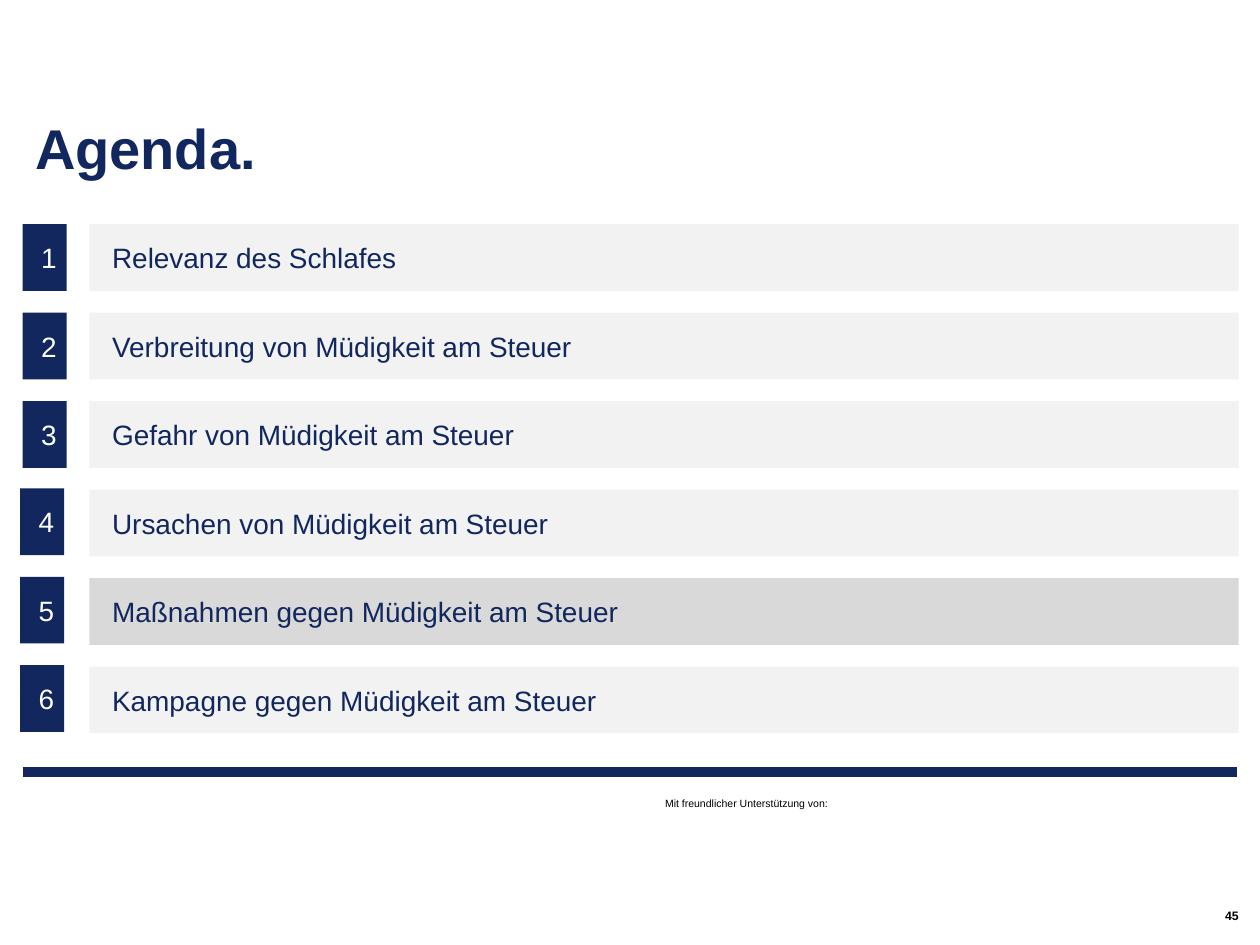
from dataclasses import dataclass

from lxml.etree import SubElement
from pptx import Presentation
from pptx.dml.color import RGBColor
from pptx.enum.shapes import MSO_CONNECTOR as Connector, MSO_SHAPE as Shape
from pptx.enum.text import MSO_ANCHOR as Anchor, PP_ALIGN as Align
from pptx.oxml.ns import qn
from pptx.util import Inches, Pt

NAVY = RGBColor(0x11, 0x27, 0x5D)
WHITE = RGBColor(0xFF, 0xFF, 0xFF)
BLACK = RGBColor(0, 0, 0)
LIGHT_GREY = RGBColor(0xF2, 0xF2, 0xF2)
MID_GREY = RGBColor(0xD9, 0xD9, 0xD9)

# Agenda grid in inches: a number column and a topic column
FIRST_ROW, ROW_PITCH, ROW_HEIGHT = 1.78, 0.702, 0.53
NUMBER_LEFT, NUMBER_WIDTH = 0.18, 0.35
TOPIC_LEFT, TOPIC_WIDTH = 0.71, 9.12


@dataclass(frozen=True)
class Topic:
    title: str
    fill: RGBColor = LIGHT_GREY
    nudge_left: float = 0
    nudge_up: float = 0


@dataclass(frozen=True)
class Style:
    size: float
    color: RGBColor
    bold: bool = False
    align: Align = Align.LEFT
    anchor: Anchor = Anchor.MIDDLE
    side_inset: float = 0.1
    end_inset: float = 0.05
    space_after: float = 0
    line_spacing: float = 1.0


TOPICS = (
    Topic("Relevanz des Schlafes"),
    Topic("Verbreitung von Müdigkeit am Steuer"),
    Topic("Gefahr von Müdigkeit am Steuer"),
    Topic("Ursachen von Müdigkeit am Steuer", nudge_left=0.02, nudge_up=0.01),
    Topic("Maßnahmen gegen Müdigkeit am Steuer", MID_GREY, 0.02, 0.01),
    Topic("Kampagne gegen Müdigkeit am Steuer", nudge_left=0.02, nudge_up=0.01),
)

TITLE = Style(32, NAVY, bold=True, anchor=Anchor.BOTTOM, end_inset=0, line_spacing=0.9)
NUMBER = Style(16, WHITE, align=Align.RIGHT, side_inset=0.08, space_after=8)
TOPIC = Style(16, NAVY, side_inset=0.18, space_after=8)
SUPPORT = Style(6, BLACK, anchor=Anchor.TOP)
PAGE_NUMBER = Style(7, BLACK, bold=True, align=Align.RIGHT, side_inset=0, end_inset=0)


def write(box, text: str, style: Style) -> None:
    frame = box.text_frame
    frame.text = text
    frame.word_wrap = True
    frame.vertical_anchor = style.anchor
    frame.margin_left = frame.margin_right = Inches(style.side_inset)
    frame.margin_top = frame.margin_bottom = Inches(style.end_inset)
    para = frame.paragraphs[0]
    para.alignment = style.align
    para.space_after = Pt(style.space_after)
    para.line_spacing = style.line_spacing
    font = para.runs[0].font
    font.name, font.size, font.bold = "Arial", Pt(style.size), style.bold
    font.color.rgb = style.color


def add_text(page, area: tuple[float, ...], text: str, style: Style) -> None:
    write(page.shapes.add_textbox(*map(Inches, area)), text, style)


def add_bar(page, area: tuple[float, ...], fill: RGBColor, text: str, style: Style) -> None:
    bar = page.shapes.add_shape(Shape.RECTANGLE, *map(Inches, area))
    bar.shadow.inherit = False
    bar.fill.solid()
    bar.fill.fore_color.rgb = fill
    bar.line.fill.background()
    write(bar, text, style)


def add_rule(page, left: float, right: float, top: float) -> None:
    rule = page.shapes.add_connector(
        Connector.STRAIGHT, Inches(left), Inches(top), Inches(right), Inches(top))
    rule.line.color.rgb = NAVY
    rule.line.width = Pt(5.67)
    SubElement(rule._element.spPr, qn("a:effectLst"))


def main() -> None:
    deck = Presentation()
    deck.slide_width, deck.slide_height = Inches(10), Inches(7.5)
    page = deck.slides.add_slide(deck.slide_layouts[6])

    # Footer rule and supporter line
    add_rule(page, 0.18, 9.82, 6.13)
    add_text(page, (5.18, 6.28, 2.03, 0.2), "Mit freundlicher Unterstützung von:", SUPPORT)

    # Title and page number
    add_text(page, (0.18, 0.39, 9.65, 1.05), "Agenda.", TITLE)
    add_text(page, (6.45, 7.19, 3.38, 0.16), "45", PAGE_NUMBER)

    # Agenda rows
    for row, topic in enumerate(TOPICS):
        top = FIRST_ROW + row * ROW_PITCH
        number_area = (NUMBER_LEFT - topic.nudge_left, top - topic.nudge_up,
                       NUMBER_WIDTH, ROW_HEIGHT)
        add_bar(page, number_area, NAVY, str(row + 1), NUMBER)
        add_bar(page, (TOPIC_LEFT, top, TOPIC_WIDTH, ROW_HEIGHT),
                topic.fill, topic.title, TOPIC)

    deck.save("out.pptx")


if __name__ == "__main__":
    main()
